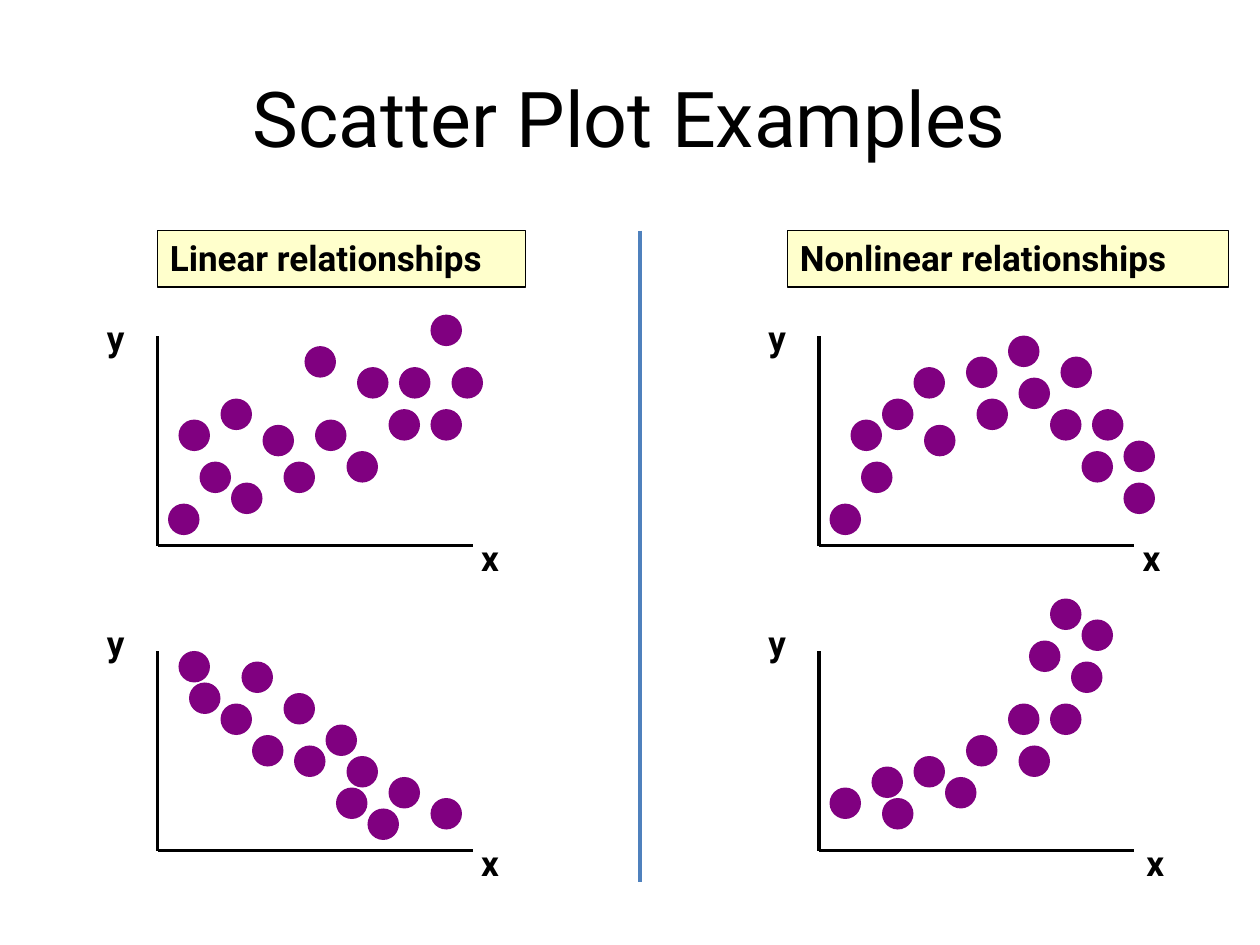
"""Build a slide of linear and nonlinear scatter plot examples."""
from pptx import Presentation
from pptx.dml.color import RGBColor
from pptx.enum.shapes import MSO_CONNECTOR, MSO_SHAPE
from pptx.enum.text import MSO_ANCHOR, MSO_AUTO_SIZE, PP_ALIGN
from pptx.oxml.ns import qn
from pptx.util import Inches, Pt
from lxml.etree import SubElement

BLACK = RGBColor(0x00, 0x00, 0x00)
PURPLE = RGBColor(0x80, 0x00, 0x80)
CREAM = RGBColor(0xFF, 0xFF, 0xCC)
BLUE = RGBColor(0x4F, 0x81, 0xBD)

UNIT = 1 / 12
LEFT_AXIS, RIGHT_AXIS = 1.25, 6.5
UPPER_BASE, LOWER_BASE = 4.33, 6.75

RISING = [(1, 4), (4, 8), (26, 22), (28, 17), (7, 6), (23, 17), (18, 9), (19, 17),
          (14, 19), (2, 12), (6, 14), (10, 11.5), (22, 13), (15, 12), (12, 8), (26, 13)]
FALLING = [(20, 4), (3, 16), (26, 5), (8, 18), (18, 9), (22, 7), (12, 15),
           (2, 19), (6, 14), (9, 11), (17, 6), (16, 12), (13, 10)]
ARCHED = [(1, 4), (4, 8), (29, 10), (23, 18), (9, 17), (29, 6), (25, 9), (19, 16),
          (14, 18), (3, 12), (6, 14), (10, 11.5), (22, 13), (15, 14), (18, 20), (26, 13)]
CURVED = [(1, 6), (5, 8), (25, 22), (24, 18), (6, 5), (20, 20), (19, 10),
          (18, 14), (22, 24), (9, 9), (22, 14), (14, 11), (12, 7)]


class ScatterSlide:
    font = "Roboto"
    label_size = 20
    dot_size = 0.25
    axis_length = 2.5

    def __init__(self, slide):
        self.shapes = slide.shapes

    def set_words(self, frame, words, size, bold):
        frame.text = words
        font = frame.paragraphs[0].runs[0].font
        font.name, font.size, font.bold = self.font, Pt(size), bold
        font.color.rgb = BLACK

    def title(self, words):
        frame = self.shapes.add_textbox(
            Inches(0.5), Inches(0.3), Inches(9), Inches(1.25)).text_frame
        frame.word_wrap = True
        frame.vertical_anchor = MSO_ANCHOR.MIDDLE
        self.set_words(frame, words, 44, False)
        frame.paragraphs[0].alignment = PP_ALIGN.CENTER

    def axis_label(self, words, left, top, width):
        frame = self.shapes.add_textbox(
            Inches(left), Inches(top), Inches(width), Inches(0.44)).text_frame
        frame.word_wrap = False
        frame.auto_size = MSO_AUTO_SIZE.SHAPE_TO_FIT_TEXT
        self.set_words(frame, words, self.label_size, True)

    def heading(self, words, left, width):
        banner = self.shapes.add_shape(
            MSO_SHAPE.RECTANGLE, Inches(left), Inches(1.83), Inches(width), Inches(0.45))
        banner.shadow.inherit = False
        banner.fill.solid()
        banner.fill.fore_color.rgb = CREAM
        banner.line.color.rgb = BLACK
        banner.line.width = Pt(1)
        frame = banner.text_frame
        frame.word_wrap = True
        frame.auto_size = MSO_AUTO_SIZE.SHAPE_TO_FIT_TEXT
        frame.vertical_anchor = MSO_ANCHOR.TOP
        self.set_words(frame, words, self.label_size, True)
        frame.paragraphs[0].alignment = PP_ALIGN.LEFT

    def line(self, x1, y1, x2, y2, color=BLACK, width=2):
        stroke = self.shapes.add_connector(
            MSO_CONNECTOR.STRAIGHT, Inches(x1), Inches(y1), Inches(x2), Inches(y2))
        stroke.line.color.rgb = color
        stroke.line.width = Pt(width)
        SubElement(stroke._element.spPr, qn("a:effectLst"))

    def dot(self, left, top):
        point = self.shapes.add_shape(
            MSO_SHAPE.OVAL, Inches(left), Inches(top),
            Inches(self.dot_size), Inches(self.dot_size))
        point.shadow.inherit = False
        point.fill.solid()
        point.fill.fore_color.rgb = PURPLE
        point.line.fill.background()

    def plot(self, left, base, height, points, x_label_offset=2.47):
        self.line(left, base - height, left, base)
        for across, up in points:
            self.dot(left + across * UNIT, base - up * UNIT)
        self.axis_label("y", left - 0.5, base - 1.87, 0.33)
        self.line(left, base, left + self.axis_length, base)
        self.axis_label("x", left + x_label_offset, base - 0.12, 0.32)


def main():
    deck = Presentation()
    deck.slide_width, deck.slide_height = Inches(10), Inches(7.5)
    examples = ScatterSlide(deck.slides.add_slide(deck.slide_layouts[6]))
    examples.title("Scatter Plot Examples")
    examples.plot(LEFT_AXIS, LOWER_BASE, 1.58, FALLING)
    examples.plot(LEFT_AXIS, UPPER_BASE, 1.66, RISING)
    examples.plot(RIGHT_AXIS, LOWER_BASE, 1.58, CURVED, x_label_offset=2.5)
    examples.plot(RIGHT_AXIS, UPPER_BASE, 1.66, ARCHED)
    examples.heading("Linear relationships", 1.25, 2.92)
    examples.heading("Nonlinear relationships", 6.25, 3.5)
    examples.line(5.08, 1.83, 5.08, 7, BLUE, 2.25)
    deck.save("out.pptx")


if __name__ == "__main__":
    main()
